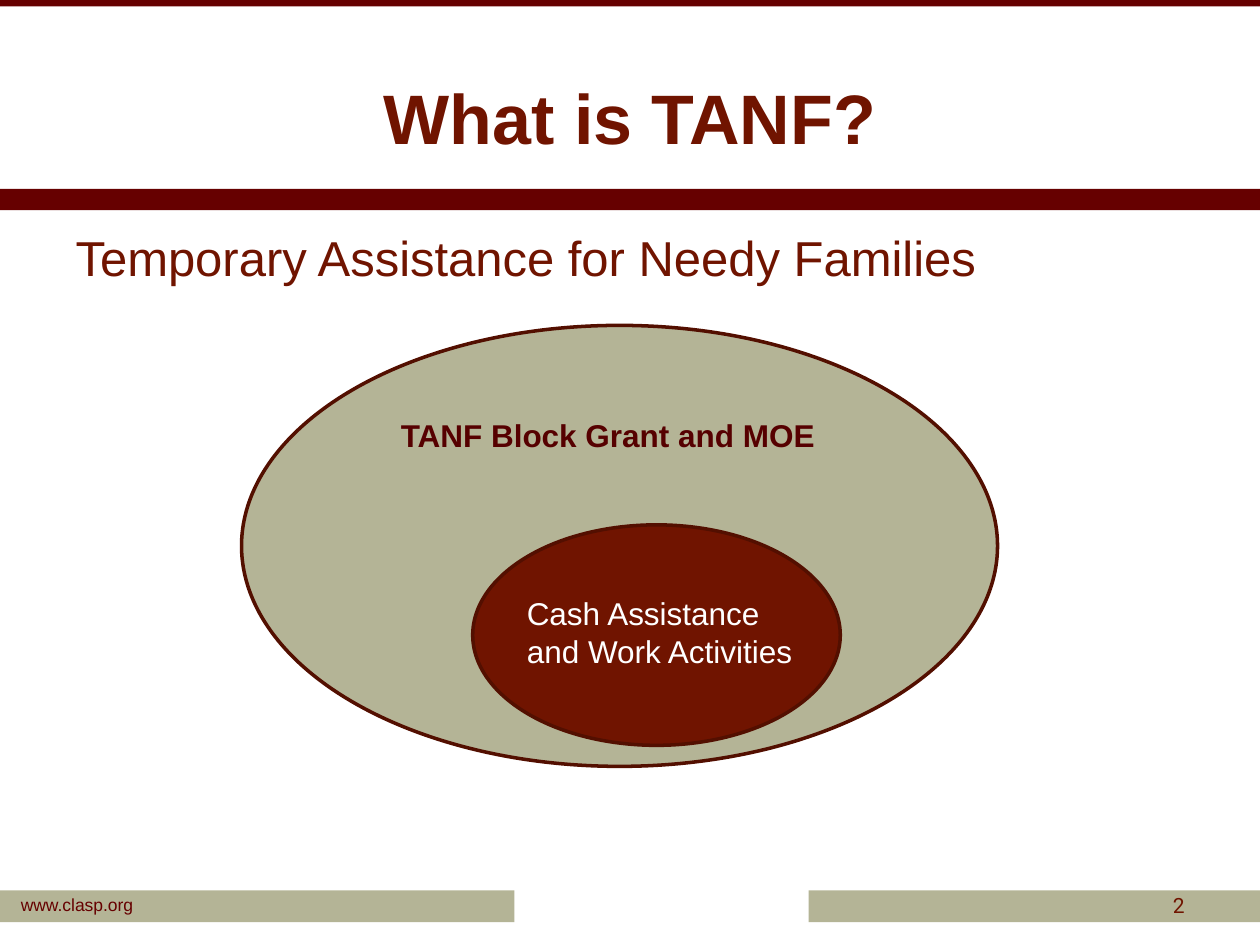
import pptx
import pptx.util
import pptx.dml.color
import pptx.enum.shapes
import pptx.enum.text
import lxml.etree

Cm = pptx.util.Cm
Pt = pptx.util.Pt
ALIGN = pptx.enum.text.PP_ALIGN
ANCHOR = pptx.enum.text.MSO_ANCHOR
SHAPE = pptx.enum.shapes.MSO_SHAPE

COLORS = {
    "bar": "660000",
    "sage": "B4B496",
    "maroon": "701400",
    "outline": "530F00",
    "label": "560000",
    "white": "FFFFFF",
}


def rgb(name):
    return pptx.dml.color.RGBColor.from_string(COLORS[name])


def place(sp, x, y, w, h):
    sp.left, sp.top, sp.width, sp.height = Cm(x), Cm(y), Cm(w), Cm(h)


def add_shape(s, kind, box, fill, line=None):
    sp = s.shapes.add_shape(kind, *[Cm(v) for v in box])
    sp.shadow.inherit = False
    sp.fill.solid()
    sp.fill.fore_color.rgb = rgb(fill)
    if line:
        sp.line.color.rgb = rgb(line)
        sp.line.width = Pt(2)
    else:
        sp.line.fill.background()
    return sp


def write(sp, text, size, color, bold=False, align=ALIGN.LEFT,
          anchor=ANCHOR.TOP, font="Arial"):
    tf = sp.text_frame
    tf.word_wrap = True
    tf.vertical_anchor = anchor
    tf.text = text
    p = tf.paragraphs[0]
    p.alignment = align
    p.space_before = Pt(0)
    r = p.runs[0]
    r.font.name = font
    r.font.size = Pt(size)
    r.font.bold = bold
    r.font.color.rgb = rgb(color)
    return p


def add_text(s, box, *args, **kwargs):
    sp = s.shapes.add_textbox(*[Cm(v) for v in box])
    write(sp, *args, **kwargs)
    return sp


def header(s, x, y, w, h):
    add_shape(s, SHAPE.RECTANGLE, (x, y, w, 0.13), "bar")
    add_shape(s, SHAPE.RECTANGLE, (x, y + h - 0.43, w, 0.43), "bar")
    title = s.shapes.title
    place(title, x + 1.27, y + 0.76, w - 2.54, 3.18)
    write(title, "What is TANF?", 40, "maroon", True, ALIGN.CENTER,
          ANCHOR.MIDDLE)


def body(s, x, y, w, h):
    sp = s.placeholders[1]
    place(sp, x, y, w, h)
    p = write(sp, "Temporary Assistance for Needy Families", 28, "maroon")
    pPr = p._p.get_or_add_pPr()
    pPr.set("marL", str(Cm(0.95)))
    pPr.set("indent", str(Cm(-0.95)))
    lxml.etree.SubElement(pPr, pptx.oxml.ns.qn("a:buNone"))


def diagram(s, x, y, w, h):
    add_shape(s, SHAPE.OVAL, (x, y, w, h), "sage", "outline")
    add_text(s, (x + 2.96, y + 1.7, 10.16, 1.02),
             "TANF Block Grant and MOE", 18, "label", True)
    add_shape(s, SHAPE.OVAL, (x + 4.66, y + 4.02, 7.41, h / 2),
              "maroon", "outline")
    add_text(s, (x + 5.5, y + 5.29, 5.93, 1.8),
             "Cash Assistance and Work Activities", 18, "white")


def footer(s, x, y, w, h):
    add_shape(s, SHAPE.RECTANGLE, (x, y, 10.37, h), "sage")
    add_shape(s, SHAPE.RECTANGLE, (x + 16.3, y, w - 16.3, h), "sage")
    site = add_text(s, (x + 0.42, y + 0.08, 3.45, 0.43),
                    "www.clasp.org", 10, "bar")
    tf = site.text_frame
    tf.margin_left = tf.margin_right = tf.margin_top = tf.margin_bottom = 0
    add_text(s, (x + 18.2, y - 0.17, 5.93, 0.95), "2", 12, "maroon",
             align=ALIGN.RIGHT, anchor=ANCHOR.MIDDLE, font="Roboto")


def main():
    prs = pptx.Presentation()
    prs.slide_width, prs.slide_height = Cm(25.4), Cm(19.05)
    s = prs.slides.add_slide(prs.slide_layouts[1])
    header(s, 0, 0, 25.4, 4.24)
    body(s, 1.27, 4.45, 22.86, 12.57)
    diagram(s, 4.87, 6.56, 15.24, 8.89)
    footer(s, 0, 17.95, 25.4, 0.64)
    prs.save("out.pptx")


if __name__ == "__main__":
    main()
